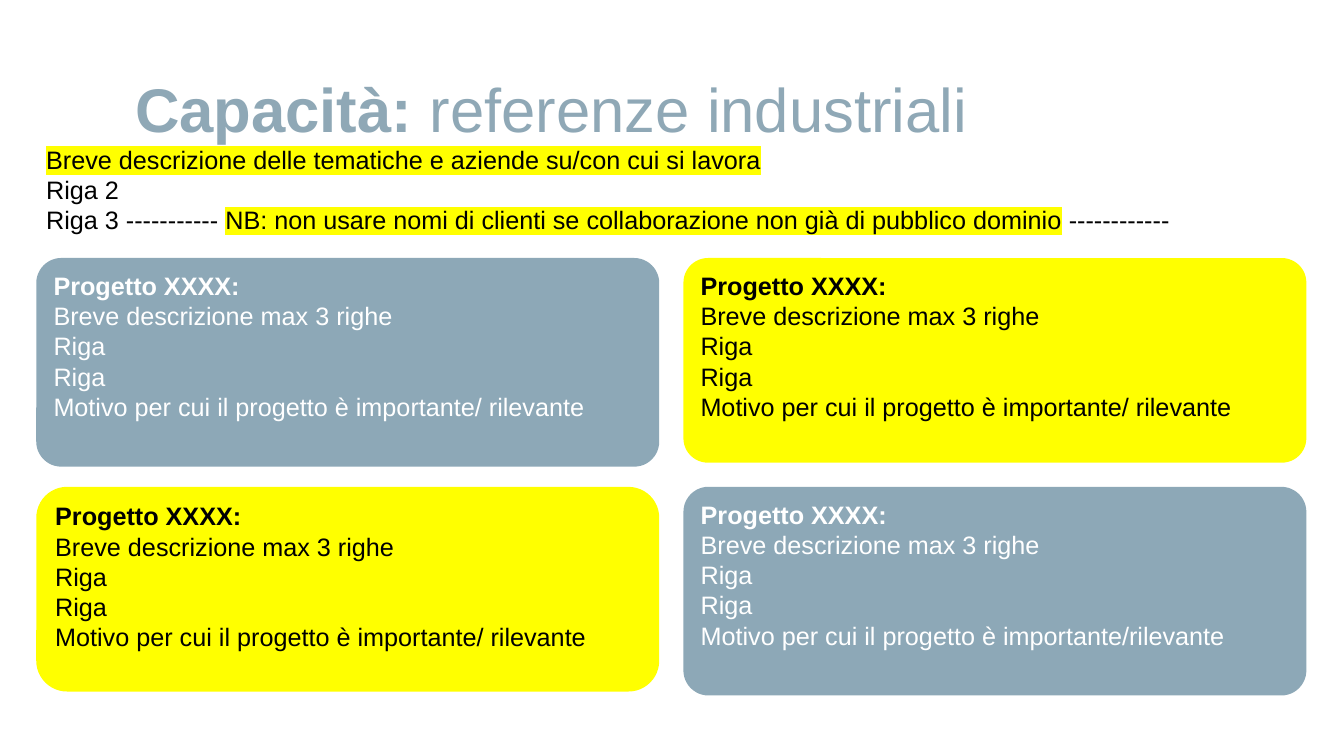
import lxml.etree
import pptx
import pptx.dml.color
import pptx.enum.shapes
import pptx.enum.text
import pptx.oxml.ns
import pptx.util

COLOURS = {
    "title": "8FA8B6",
    "steel": "8DA8B7",
    "yellow": "FFFF00",
    "black": "000000",
    "white": "FFFFFF",
}
MARGIN = 2.7
CARD_TOP = 34.13
CARD_WIDTH = 46.35
COLUMN_STEP = 48.15
ROW_STEP = 30.27
CARD_STYLES = {"steel": ("white", 27.6), "yellow": ("black", 27.07)}


class Slide:
    font = "Arial"
    body_size = 18
    title_size = 44

    def __init__(self, deck):
        self.width = deck.slide_width
        self.height = deck.slide_height
        self.page = deck.slides.add_slide(deck.slide_layouts[5])

    def area(self, left, top, width, height):
        return (
            int(self.width * left / 100),
            int(self.height * top / 100),
            int(self.width * width / 100),
            int(self.height * height / 100),
        )

    def colour(self, name):
        return pptx.dml.color.RGBColor.from_string(COLOURS[name])

    def span(self, para, text, size, colour, bold=False, highlight=None):
        span = para.add_run()
        span.text = text
        span.font.size = pptx.util.Pt(size)
        span.font.bold = bold
        span.font.color.rgb = self.colour(colour)
        if highlight:
            mark = lxml.etree.SubElement(
                span.font._element, pptx.oxml.ns.qn("a:highlight")
            )
            lxml.etree.SubElement(
                mark, pptx.oxml.ns.qn("a:srgbClr"), val=COLOURS[highlight]
            )
        span.font.name = self.font

    def paragraphs(self, frame, count):
        for _ in range(count - 1):
            frame.add_paragraph()
        return frame.paragraphs

    def title(self, strong, rest, area):
        box = self.page.shapes.title
        box.left, box.top, box.width, box.height = self.area(*area)
        frame = box.text_frame
        frame.word_wrap = False
        frame.auto_size = pptx.enum.text.MSO_AUTO_SIZE.NONE
        frame.vertical_anchor = pptx.enum.text.MSO_ANCHOR.MIDDLE
        frame.margin_left = frame.margin_right = 0
        para = frame.paragraphs[0]
        para.alignment = pptx.enum.text.PP_ALIGN.LEFT
        para.line_spacing = 0.9
        self.span(para, strong, self.title_size, "title", bold=True)
        self.span(para, rest, self.title_size, "title")

    def intro(self, lines, area):
        box = self.page.shapes.add_textbox(*self.area(*area))
        frame = box.text_frame
        frame.word_wrap = True
        frame.auto_size = pptx.enum.text.MSO_AUTO_SIZE.SHAPE_TO_FIT_TEXT
        for para, parts in zip(self.paragraphs(frame, len(lines)), lines):
            properties = para._p.get_or_add_pPr()
            properties.set("marL", "0")
            properties.set("indent", str(-pptx.util.Inches(0.1)))
            for text, highlight in parts:
                self.span(para, text, self.body_size, "black", highlight=highlight)

    def card(self, column, row, fill, corner, lines):
        text_colour, height = CARD_STYLES[fill]
        card = self.page.shapes.add_shape(
            pptx.enum.shapes.MSO_SHAPE.ROUNDED_RECTANGLE,
            *self.area(
                MARGIN + column * COLUMN_STEP,
                CARD_TOP + row * ROW_STEP,
                CARD_WIDTH,
                height,
            ),
        )
        card.adjustments[0] = corner
        card.shadow.inherit = False
        card.fill.solid()
        card.fill.fore_color.rgb = self.colour(fill)
        card.line.fill.background()
        frame = card.text_frame
        frame.word_wrap = True
        frame.vertical_anchor = pptx.enum.text.MSO_ANCHOR.TOP
        for index, para in enumerate(self.paragraphs(frame, len(lines))):
            para.alignment = pptx.enum.text.PP_ALIGN.LEFT
            self.span(
                para, lines[index], self.body_size, text_colour, bold=index == 0
            )


def main():
    deck = pptx.Presentation()
    deck.slide_width = pptx.util.Inches(13.33)
    deck.slide_height = pptx.util.Inches(7.5)
    slide = Slide(deck)

    slide.title("Capacità:", " referenze industriali", (10.05, 9.87, 80.25, 10))
    slide.intro(
        [
            [("Breve descrizione delle tematiche e aziende su/con cui si lavora", "yellow")],
            [("Riga 2", None)],
            [
                ("Riga 3 ----------- ", None),
                (
                    "NB: non usare nomi di clienti se collaborazione "
                    "non già di pubblico dominio",
                    "yellow",
                ),
                (" ------------", None),
            ],
        ],
        (MARGIN, 18.4, 94.5, 13.47),
    )

    project = ["Progetto XXXX:", "Breve descrizione max 3 righe", "Riga", "Riga"]
    reason = "Motivo per cui il progetto è importante/ rilevante"
    cards = [
        ("steel", 0.12, reason),
        ("yellow", 0.12, reason),
        ("yellow", 0.15, reason),
        ("steel", 0.12, "Motivo per cui il progetto è importante/rilevante"),
    ]
    for index, (fill, corner, closing) in enumerate(cards):
        row, column = divmod(index, 2)
        slide.card(column, row, fill, corner, project + [closing])

    deck.save("out.pptx")


if __name__ == "__main__":
    main()
